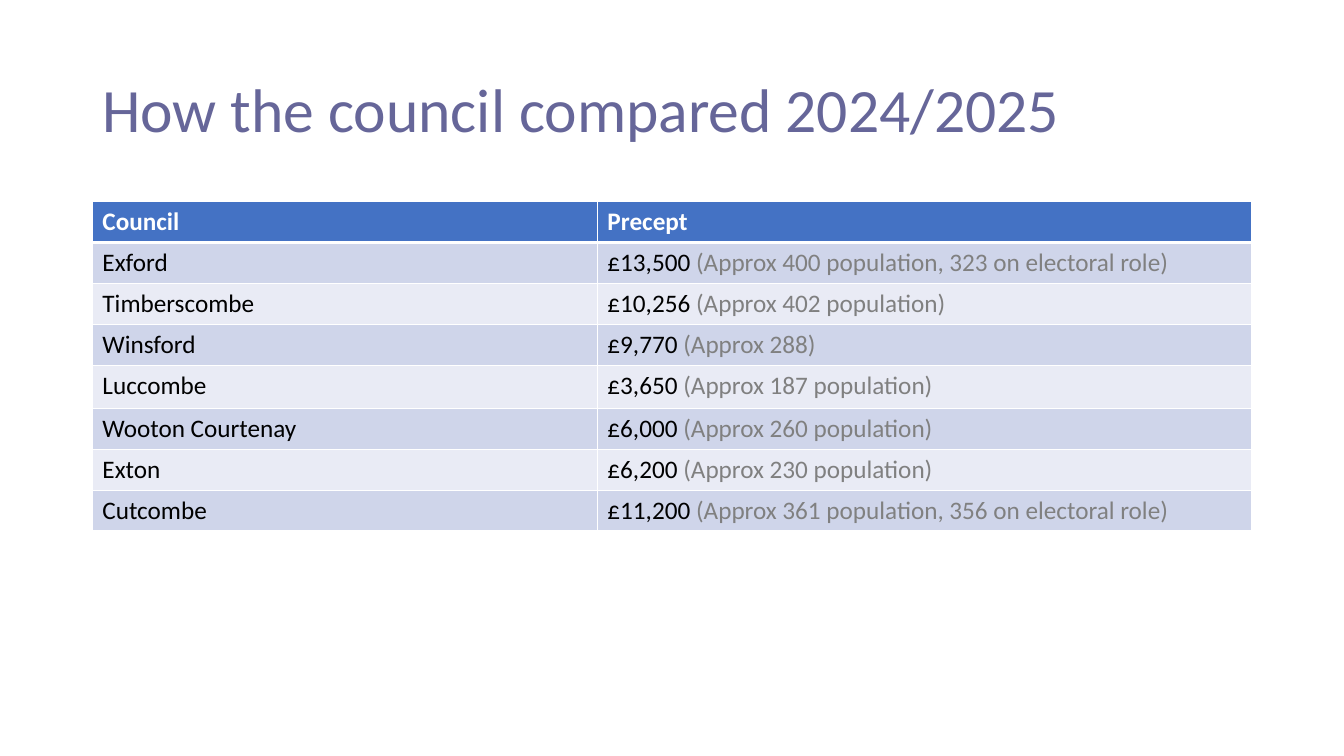
from lxml import etree
from pptx import Presentation
from pptx import util as u
from pptx.dml.color import RGBColor
from pptx.enum import text
from pptx.oxml import ns

PX = 9525  # EMU per px, 96 px to the inch
FONT = "Calibri"
WHITE = RGBColor(0xFF, 0xFF, 0xFF)
BLACK = RGBColor(0, 0, 0)
GREY = RGBColor(0x80, 0x80, 0x80)
PURPLE = RGBColor(0x66, 0x66, 0x99)
HEADER_BLUE = RGBColor(0x44, 0x72, 0xC4)
BANDS = (RGBColor(0xCF, 0xD5, 0xEA), RGBColor(0xE9, 0xEB, 0xF5))

COLUMN_WIDTHS = (481, 623)
ROW_HEIGHTS = (39, 39, 39, 39, 41, 39, 39, 39)
HEADINGS = ("Council", "Precept")
COUNCILS = (
    ("Exford", "£13,500 ", "(Approx 400 population, 323 on electoral role)"),
    ("Timberscombe", "£10,256 ", "(Approx 402 population)"),
    ("Winsford", "£9,770 ", "(Approx 288)"),
    ("Luccombe", "£3,650 ", "(Approx 187 population)"),
    ("Wooton Courtenay", "£6,000 ", "(Approx 260 population)"),
    ("Exton", "£6,200 ", "(Approx 230 population)"),
    ("Cutcombe", "£11,200 ", "(Approx 361 population, 356 on electoral role)"),
)


def emu(*lengths):
    return [u.Emu(length * PX) for length in lengths]


def add_title(page, left, top, width, height):
    box = page.shapes.add_textbox(*emu(left, top, width, height))
    frame = box.text_frame
    frame.word_wrap = True
    frame.vertical_anchor = text.MSO_ANCHOR.MIDDLE
    para = frame.paragraphs[0]
    para.text = "How the council compared 2024/2025"
    para.line_spacing = 0.9
    para.font.size = u.Pt(44)
    para.font.name = FONT
    para.font.color.rgb = PURPLE


def set_borders(cell, top, bottom):
    """Draw white cell borders; top and bottom are widths in points."""
    properties = cell._tc.get_or_add_tcPr()
    widths = {"lnL": 1, "lnR": 1, "lnT": top, "lnB": bottom}
    for place, (tag, width) in enumerate(widths.items()):
        line = etree.Element(ns.qn(f"a:{tag}"), w=str(u.Pt(width)))
        fill = etree.SubElement(line, ns.qn("a:solidFill"))
        etree.SubElement(fill, ns.qn("a:srgbClr"), val=str(WHITE))
        properties.insert(place, line)


def fill_cell(cell, spans, background, bold=False):
    """Write spans, pairs of wording and colour, into one cell."""
    cell.fill.solid()
    cell.fill.fore_color.rgb = background
    para = cell.text_frame.paragraphs[0]
    para.font.size = u.Pt(18)
    para.font.name = FONT
    para.font.bold = bold
    for wording, color in spans:
        span = para.add_run()
        span.text = wording
        span.font.color.rgb = color


def add_precept_table(page, left, top):
    frame = page.shapes.add_table(
        len(ROW_HEIGHTS), len(COLUMN_WIDTHS),
        *emu(left, top, sum(COLUMN_WIDTHS), sum(ROW_HEIGHTS)))
    table = frame.table
    for column, width in zip(table.columns, emu(*COLUMN_WIDTHS)):
        column.width = width
    for row, height in zip(table.rows, emu(*ROW_HEIGHTS)):
        row.height = height

    # Header row
    for column, heading in enumerate(HEADINGS):
        fill_cell(table.cell(0, column), [(heading, WHITE)], HEADER_BLUE, True)

    # Banded council rows
    for row, (council, precept, note) in enumerate(COUNCILS, start=1):
        band = BANDS[(row - 1) % 2]
        fill_cell(table.cell(row, 0), [(council, BLACK)], band)
        fill_cell(table.cell(row, 1), [(precept, BLACK), (note, GREY)], band)

    # Borders, heavier below the header
    for row in range(len(ROW_HEIGHTS)):
        for column in range(len(COLUMN_WIDTHS)):
            set_borders(table.cell(row, column),
                        top=3 if row == 1 else 1, bottom=3 if row == 0 else 1)


def main():
    deck = Presentation()
    deck.slide_width, deck.slide_height = emu(1280, 720)
    page = deck.slides.add_slide(deck.slide_layouts[6])
    add_title(page, 88, 38, 1104, 139)
    add_precept_table(page, 88, 192)
    deck.save("out.pptx")


if __name__ == "__main__":
    main()
